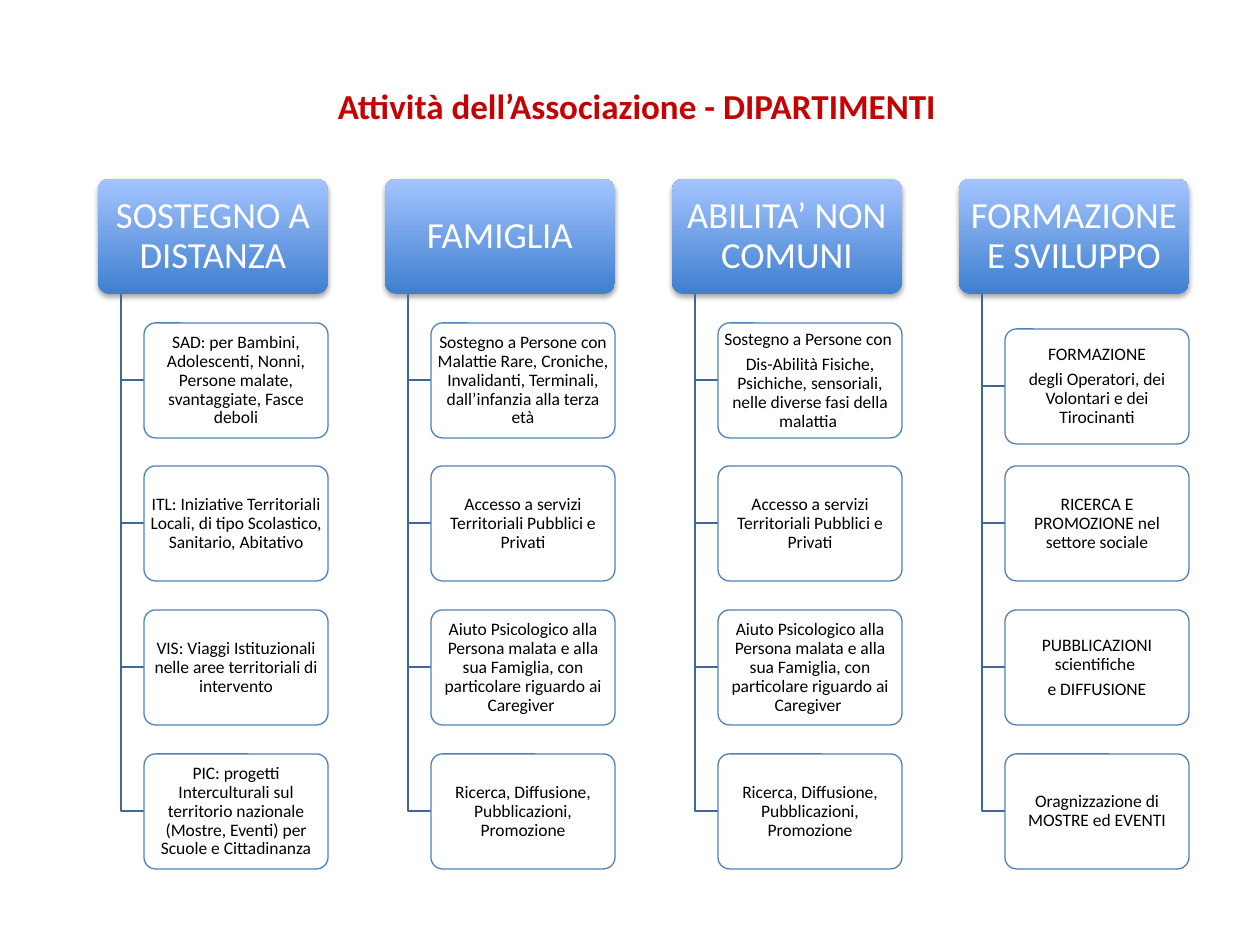
"""Build the slide of the association's four departments and their activities."""
from lxml import etree
from pptx import Presentation
from pptx import util as u
from pptx.dml.color import RGBColor
from pptx.enum import shapes, text
from pptx.oxml import ns

TITLE = "Attività dell’Associazione - DIPARTIMENTI"
ACCESS = "Accesso a servizi Territoriali Pubblici e Privati"
CARE = ("Aiuto Psicologico alla Persona malata e alla sua Famiglia, "
        "con particolare riguardo ai Caregiver ")
SHARE = "Ricerca, Diffusione, Pubblicazioni, Promozione"
UNITS = [
    ("SOSTEGNO A DISTANZA", 0, [
        "SAD: per Bambini, Adolescenti, Nonni, Persone malate, svantaggiate, Fasce deboli",
        "ITL: Iniziative Territoriali Locali, di tipo Scolastico, Sanitario, Abitativo",
        "VIS: Viaggi Istituzionali nelle aree territoriali di intervento",
        "PIC: progetti Interculturali sul territorio nazionale (Mostre, Eventi) "
        "per Scuole e Cittadinanza"]),
    ("FAMIGLIA", 0, [
        "Sostegno a Persone con Malattie Rare, Croniche, Invalidanti, Terminali, "
        "dall’infanzia alla terza età",
        ACCESS, CARE, SHARE]),
    ("ABILITA’ NON COMUNI", 0, [
        "Sostegno a Persone con \nDis-Abilità Fisiche, Psichiche, sensoriali, "
        "nelle diverse fasi della malattia ",
        ACCESS, CARE, SHARE]),
    ("FORMAZIONE E SVILUPPO", 6, [
        "FORMAZIONE\ndegli Operatori, dei Volontari e dei Tirocinanti",
        "RICERCA E PROMOZIONE nel settore sociale",
        "PUBBLICAZIONI scientifiche \ne DIFFUSIONE",
        "Oragnizzazione di MOSTRE ed EVENTI"]),
]

PX = 914400 // 126
FONT = "Calibri"
RED = RGBColor(0xC4, 0x02, 0x02)
DARK = RGBColor(0x3F, 0x7F, 0xCE)
LIGHT = RGBColor(0xA4, 0xC4, 0xFF)
EDGE = RGBColor(0x4F, 0x81, 0xBD)
WIRE = RGBColor(0x3F, 0x67, 0x97)
WHITE = RGBColor(0xFF, 0xFF, 0xFF)
BLACK = RGBColor(0, 0, 0)

LEFT, TOP, STEP = 98, 179, 287
WIDE, HIGH = 230, 115
STEM, INDENT = 23, 46
FIRST, SPAN = 323, 431


def px(*nums):
    return [n * PX for n in nums]


def add_node(parent, tag, **attrs):
    return etree.SubElement(parent, ns.qn(tag), attrs)


def write(shape, words, size, color, bold=False):
    frame = shape.text_frame
    frame.word_wrap = True
    frame.text = words
    for para in frame.paragraphs:
        para.alignment = text.PP_ALIGN.CENTER
        font = para.runs[0].font
        font.name, font.size, font.bold = FONT, u.Pt(size), bold
        font.color.rgb = color


def add_box(deck, area, words, size, color, pads):
    box = deck.add_shape(shapes.MSO_SHAPE.ROUNDED_RECTANGLE, *px(*area))
    box.adjustments[0] = 0.1
    box.shadow.inherit = False
    write(box, words, size, color)
    frame = box.text_frame
    frame.vertical_anchor = text.MSO_ANCHOR.MIDDLE
    frame.margin_left = frame.margin_right = pads[0] * PX
    frame.margin_top = frame.margin_bottom = pads[1] * PX
    for spot, para in enumerate(frame.paragraphs):
        para.line_spacing = 0.9
        if spot:
            para.space_before = u.Pt(size * 0.35)
    return box


def add_head(deck, x, words):
    head = add_box(deck, (x, TOP, WIDE, HIGH), words, 21, WHITE, (5, 3))
    head.fill.gradient()
    head.fill.gradient_angle = 90
    for stop, color in zip(head.fill.gradient_stops, (DARK, LIGHT)):
        stop.color.rgb = color
    for stop, place in zip(head.fill.gradient_stops, (0, 1)):
        stop.position = place
    head.line.fill.background()
    glow = add_node(head._element.spPr.find(ns.qn("a:effectLst")), "a:outerShdw",
                    blurRad=str(u.Pt(3.1)), dist=str(u.Pt(1.8)),
                    dir="5400000", rotWithShape="0")
    tint = add_node(glow, "a:srgbClr", val="000000")
    add_node(tint, "a:alpha", val="35000")


def add_wire(deck, x, y):
    pen = deck.build_freeform(*px(x + STEM, TOP + HIGH))
    pen.add_line_segments([px(x + STEM, y), px(x + INDENT, y)], close=False)
    wire = pen.convert_to_shape()
    wire.shadow.inherit = False
    wire.fill.background()
    wire.line.color.rgb = WIRE
    wire.line.width = u.Pt(0.75)


def add_task(deck, x, y, words):
    task = add_box(deck, (x + INDENT, y, WIDE - INDENT, HIGH), words, 10, BLACK, (2, 1))
    task.fill.solid()
    task.fill.fore_color.rgb = WHITE
    tint = task._element.spPr.find(ns.qn("a:solidFill"))[0]
    add_node(tint, "a:alpha", val="90000")
    task.line.color.rgb = EDGE
    task.line.width = u.Pt(0.75)


def main():
    show = Presentation()
    show.slide_width, show.slide_height = px(1260, 945)
    deck = show.slides.add_slide(show.slide_layouts[6]).shapes
    for col, (name, drop, tasks) in enumerate(UNITS):
        x = LEFT + col * STEP
        add_head(deck, x, name)
        for row, words in enumerate(tasks):
            y = FIRST + row * SPAN // 3 + (0 if row else drop)
            add_wire(deck, x, y + HIGH // 2)
            add_task(deck, x, y, words)
    title = deck.add_textbox(*px(208, 78, 858, 55))
    write(title, TITLE, 20, RED, True)
    show.save("out.pptx")


if __name__ == "__main__":
    main()
